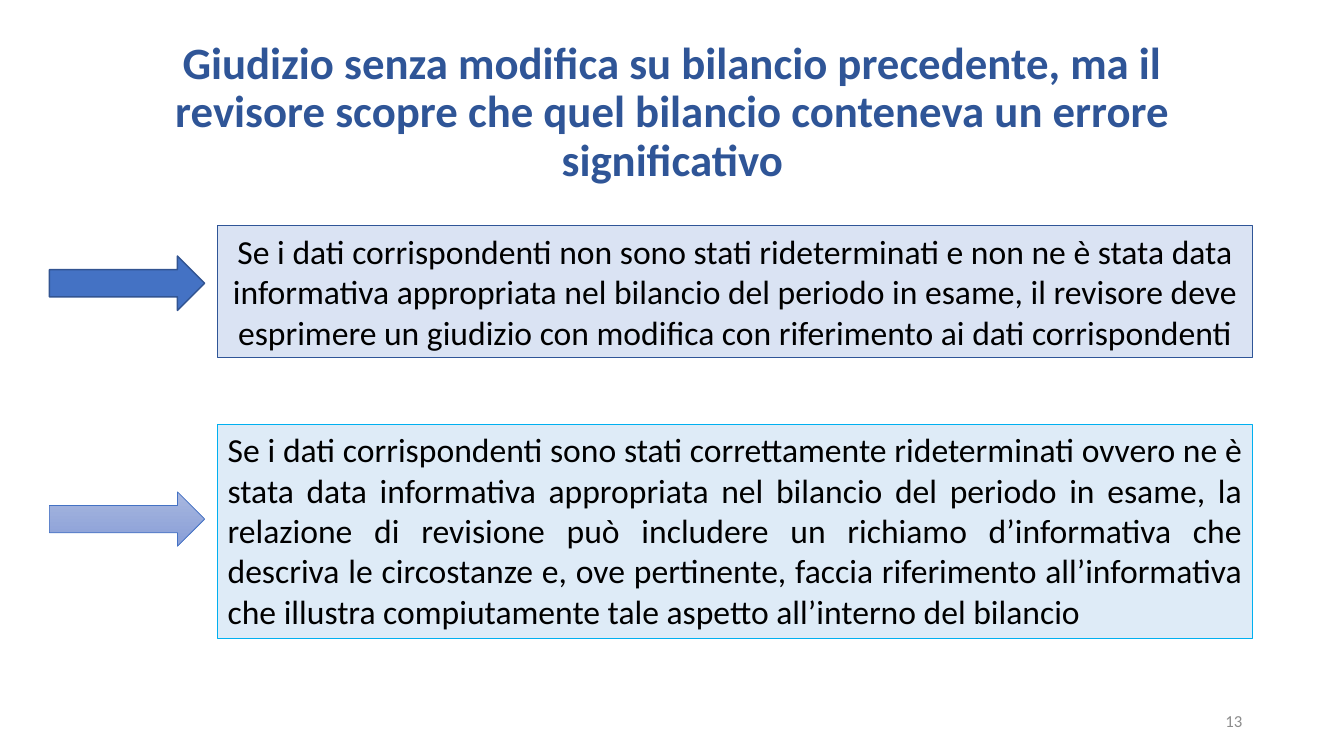
from dataclasses import dataclass

from pptx import Presentation
from pptx.dml.color import RGBColor
from pptx.enum.shapes import MSO_SHAPE
from pptx.enum.text import MSO_ANCHOR, MSO_AUTO_SIZE, PP_ALIGN
from pptx.util import Inches, Pt


@dataclass(frozen=True)
class Theme:
    font: str = "Calibri"
    title: str = "2F5597"
    text: str = "000000"
    muted: str = "8C8C8C"
    title_size: int = 32
    body_size: int = 24
    number_size: int = 12


THEME = Theme()

TITLE = ("Giudizio senza modifica su bilancio precedente, ma il revisore scopre "
         "che quel bilancio conteneva un errore significativo")

CASES = [
    {
        "box": (0.49, 2.24, 11.93, 1.31),
        "arrow_top": 0.3,
        "text": "Se i dati corrispondenti non sono stati rideterminati e non ne è stata "
                "data informativa appropriata nel bilancio del periodo in esame, il "
                "revisore deve esprimere un giudizio con modifica con riferimento ai "
                "dati corrispondenti",
        "align": PP_ALIGN.CENTER,
        "panel": (["DAE3F3"], "2F5597", 0.75),
        "arrow": (["4472C4"], "325491", 1),
    },
    {
        "box": (0.49, 4.21, 11.93, 2.12),
        "arrow_top": 0.67,
        "text": "Se i dati corrispondenti sono stati correttamente rideterminati ovvero "
                "ne è stata data informativa appropriata nel bilancio del periodo in "
                "esame, la relazione di revisione può includere un richiamo "
                "d’informativa che descriva le circostanze e, ove pertinente, faccia "
                "riferimento all’informativa che illustra compiutamente tale aspetto "
                "all’interno del bilancio",
        "align": PP_ALIGN.JUSTIFY,
        "panel": (["DEEBF7"], "00B0F0", 0.75),
        "arrow": (["A8B7DF", "889ED7"], "4472C4", 0.5),
    },
]


def set_attrs(obj, values):
    for name, value in values.items():
        setattr(obj, name, value)


def write(sp, text, size, color, align, anchor, bold=False,
          auto_size=MSO_AUTO_SIZE.NONE, spacing=1.0):
    tf = sp.text_frame
    set_attrs(tf, {"word_wrap": True, "auto_size": auto_size,
                   "vertical_anchor": anchor})
    p = tf.paragraphs[0]
    set_attrs(p, {"alignment": align, "line_spacing": spacing})
    r = p.add_run()
    r.text = text
    set_attrs(r.font, {"name": THEME.font, "size": Pt(size), "bold": bold})
    r.font.color.rgb = RGBColor.from_string(color)


def add_block(s, kind, box, style):
    """Add a preset shape; two fill colours make a top-to-bottom gradient."""
    colors, line, width = style
    sp = s.shapes.add_shape(kind, *map(Inches, box))
    sp.shadow.inherit = False
    if len(colors) == 1:
        sp.fill.solid()
        sp.fill.fore_color.rgb = RGBColor.from_string(colors[0])
    else:
        sp.fill.gradient()
        sp.fill.gradient_angle = 270
        for i, (stop, color) in enumerate(zip(sp.fill.gradient_stops, colors)):
            stop.position = i
            stop.color.rgb = RGBColor.from_string(color)
    sp.line.color.rgb = RGBColor.from_string(line)
    sp.line.width = Pt(width)
    return sp


def add_title(s, box):
    sp = s.shapes.title
    names = ("left", "top", "width", "height")
    set_attrs(sp, dict(zip(names, map(Inches, box))))
    write(sp, TITLE, THEME.title_size, THEME.title, PP_ALIGN.CENTER,
          MSO_ANCHOR.MIDDLE, bold=True, spacing=0.9)


def add_case(s, case):
    """Arrow on the left, text panel filling the rest of the box."""
    left, top, width, height = case["box"]
    indent = 1.67
    panel = add_block(s, MSO_SHAPE.RECTANGLE,
                      (left + indent, top, width - indent, height), case["panel"])
    write(panel, case["text"], THEME.body_size, THEME.text, case["align"],
          MSO_ANCHOR.TOP, auto_size=MSO_AUTO_SIZE.SHAPE_TO_FIT_TEXT)
    add_block(s, MSO_SHAPE.RIGHT_ARROW,
              (left, top + case["arrow_top"], 1.54, 0.54), case["arrow"])


def add_number(s, box):
    sp = s.shapes.add_textbox(*map(Inches, box))
    write(sp, "13", THEME.number_size, THEME.muted, PP_ALIGN.RIGHT,
          MSO_ANCHOR.MIDDLE)


def main():
    prs = Presentation()
    prs.slide_width, prs.slide_height = Inches(13.33), Inches(7.5)
    s = prs.slides.add_slide(prs.slide_layouts[5])

    # Title
    add_title(s, (0.92, 0.4, 11.5, 1.45))

    # The two cases
    for case in CASES:
        add_case(s, case)

    # Slide number
    add_number(s, (9.42, 6.95, 3, 0.4))

    prs.save("out.pptx")


if __name__ == "__main__":
    main()
